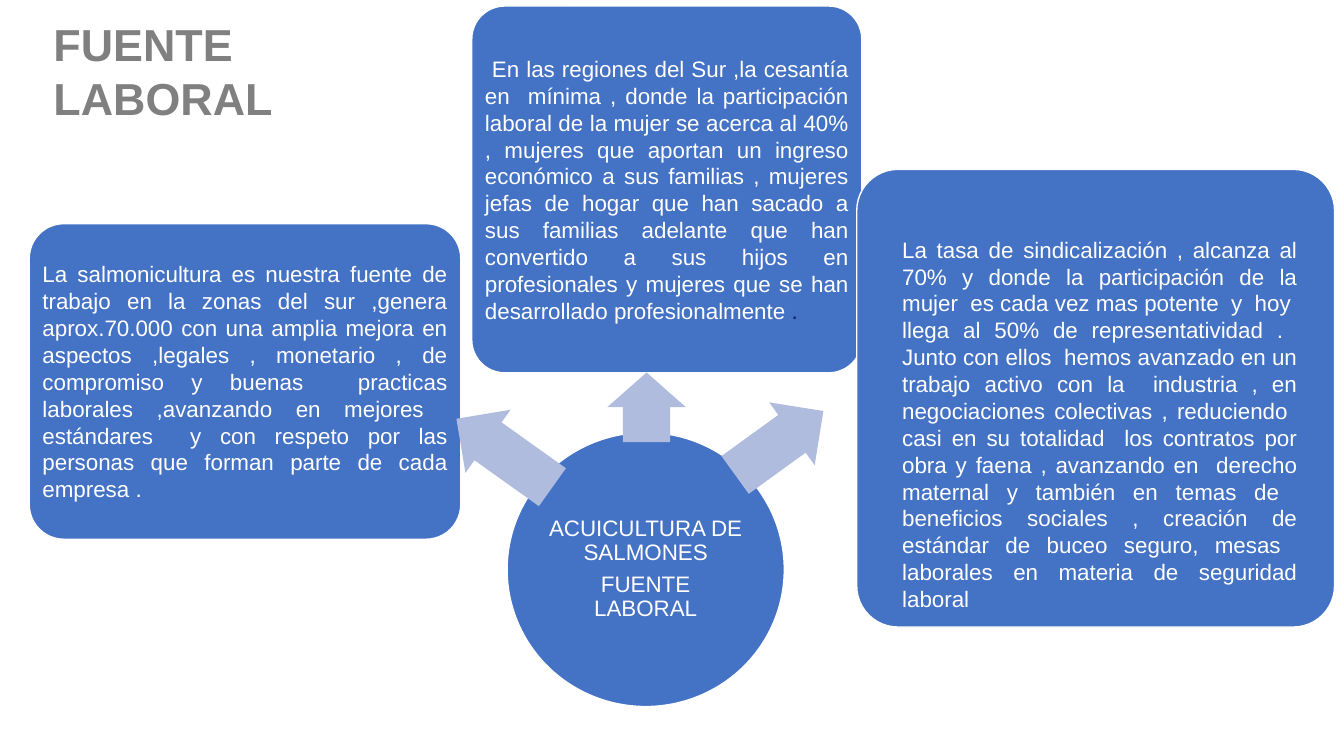
"""Build the slide on salmon farming as a source of work."""
from dataclasses import dataclass

from pptx import Presentation
from pptx import util as u
from pptx.dml.color import RGBColor
from pptx.enum import shapes, text


@dataclass(frozen=True)
class Theme:
    font: str = "Arial"
    heading: str = "808080"
    panel: str = "4472C4"
    arrow: str = "B0BCDE"
    light: str = "FFFFFF"
    accent: str = "002060"
    heading_size: float = 32
    body_size: float = 16
    margin: float = 9.36
    paragraph_gap: float = 5.6


class SlideBuilder:
    def __init__(self, slide, theme):
        self.slide = slide
        self.theme = theme

    def style(self, font, size, colour, bold=False):
        font.name, font.size, font.bold = self.theme.font, u.Pt(size), bold
        font.color.rgb = RGBColor.from_string(colour)

    def title(self, wording, box):
        heading = self.slide.shapes.title
        heading.left, heading.top, heading.width, heading.height = map(u.Pt, box)
        frame = heading.text_frame
        frame.text = wording
        frame.word_wrap = True
        frame.auto_size = text.MSO_AUTO_SIZE.NONE
        frame.vertical_anchor = text.MSO_ANCHOR.MIDDLE
        line = frame.paragraphs[0]
        line.alignment = text.PP_ALIGN.LEFT
        self.style(line.font, self.theme.heading_size, self.theme.heading, True)

    def shape(self, kind, box, colour, outlined=True):
        element = self.slide.shapes.add_shape(kind, *map(u.Pt, box))
        element.shadow.inherit = False
        element.fill.solid()
        element.fill.fore_color.rgb = RGBColor.from_string(colour)
        if outlined:
            element.line.color.rgb = RGBColor.from_string(self.theme.light)
            element.line.width = u.Pt(1)
        else:
            element.line.fill.background()
        return element

    def fill_text(self, frame, wordings, align, inset, spacing=1.0):
        frame.word_wrap = True
        frame.margin_left = frame.margin_right = u.Pt(inset)
        frame.margin_top = frame.margin_bottom = u.Pt(inset)
        for index, wording in enumerate(wordings):
            line = frame.add_paragraph() if index else frame.paragraphs[0]
            line.text = wording
            line.alignment = align
            line.line_spacing = spacing
            line.space_after = u.Pt(self.theme.paragraph_gap)
            self.style(line.font, self.theme.body_size, self.theme.light)

    def panel(self, box, rounding, wording=None, ending=None):
        panel = self.shape(shapes.MSO_SHAPE.ROUNDED_RECTANGLE, box, self.theme.panel)
        panel.adjustments[0] = rounding
        if wording:
            corner_inset = 0.29 * rounding * min(box[2:])
            frame = panel.text_frame
            frame.vertical_anchor = text.MSO_ANCHOR.MIDDLE
            self.fill_text(frame, [wording], text.PP_ALIGN.JUSTIFY, self.theme.margin - corner_inset)
            if ending:
                mark = frame.paragraphs[0].add_run()
                mark.text = ending
                mark.font.color.rgb = RGBColor.from_string(self.theme.accent)

    def hub(self, box, wordings):
        hub = self.shape(shapes.MSO_SHAPE.OVAL, box, self.theme.panel)
        hub.text_frame.vertical_anchor = text.MSO_ANCHOR.MIDDLE
        self.fill_text(hub.text_frame, wordings, text.PP_ALIGN.CENTER, 0.5, 0.9)

    def arrow(self, box, angle):
        arrow = self.shape(shapes.MSO_SHAPE.LEFT_ARROW, box, self.theme.arrow, outlined=False)
        arrow.adjustments[0], arrow.adjustments[1] = 0.6, 0.5
        arrow.rotation = angle

    def passage(self, box, wording):
        passage = self.slide.shapes.add_textbox(*map(u.Pt, box))
        self.fill_text(passage.text_frame, [wording], text.PP_ALIGN.JUSTIFY, 0)


JOBS = (
    "La salmonicultura es nuestra fuente de trabajo en la zonas del sur ,genera "
    "aprox.70.000 con una amplia mejora en aspectos ,legales , monetario , de "
    "compromiso y buenas  practicas laborales ,avanzando en mejores  estándares  y "
    "con respeto por las personas que forman parte de cada empresa ."
)
WOMEN = (
    " En las regiones del Sur ,la cesantía en  mínima , donde la participación "
    "laboral de la mujer se acerca al 40% , mujeres que aportan un ingreso económico "
    "a sus familias , mujeres jefas de hogar que han sacado a sus familias adelante "
    "que han convertido a sus hijos en profesionales y mujeres que se han "
    "desarrollado profesionalmente "
)
UNIONS = (
    "La tasa de sindicalización , alcanza al 70% y donde la participación de la "
    "mujer  es cada vez mas potente  y  hoy  llega al 50% de representatividad .  "
    "Junto con ellos  hemos avanzado en un trabajo activo con la  industria , en "
    "negociaciones colectivas , reduciendo  casi en su totalidad  los contratos por "
    "obra y faena , avanzando en  derecho maternal y también en temas de  beneficios "
    "sociales , creación de estándar de buceo seguro, mesas  laborales en materia de "
    "seguridad laboral"
)


def main():
    deck = Presentation()
    deck.slide_width, deck.slide_height = u.Pt(960), u.Pt(540)
    builder = SlideBuilder(deck.slides.add_slide(deck.slide_layouts[5]), Theme())
    builder.title("FUENTE LABORAL", (31, 8, 278.6, 85))
    builder.hub((362.2, 308.9, 198, 195.8), ["ACUICULTURA DE SALMONES", "FUENTE LABORAL"])
    builder.panel((20.9, 159.8, 308.2, 225.4), 0.11, JOBS)
    builder.panel((337, 4.3, 278.6, 262), 0.09, WOMEN, ".")
    builder.arrow((318.2, 295.9, 84.2, 55.4), 35.5)
    builder.arrow((437, 262.8, 49.7, 56.2), 90)
    builder.panel((612, 121, 341.3, 326.9), 0.09)
    builder.arrow((517.7, 288.7, 77.8, 55.4), 144.1)
    builder.passage((644.4, 168.5, 282.2, 271.4), UNIONS)
    deck.save("out.pptx")


if __name__ == "__main__":
    main()
